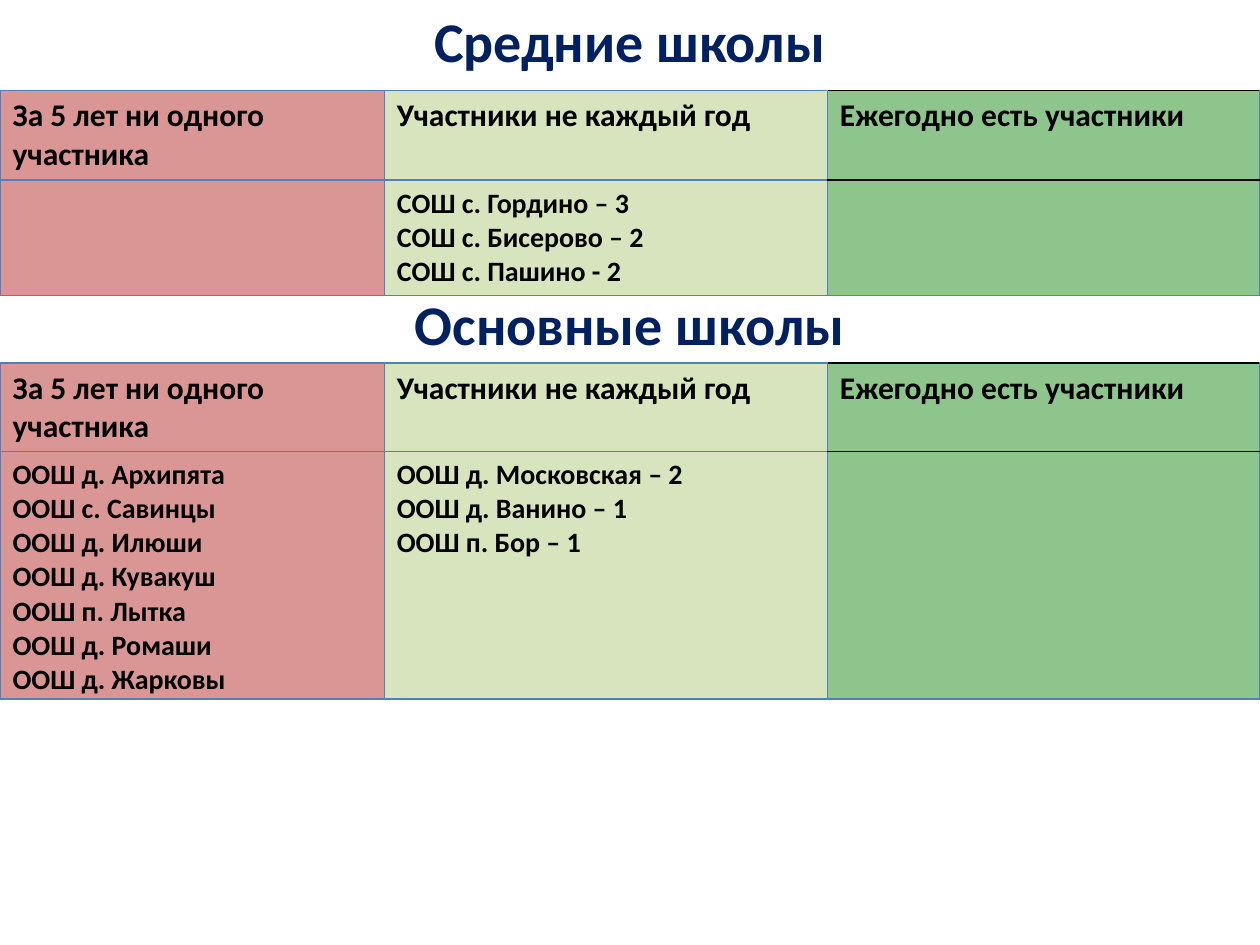
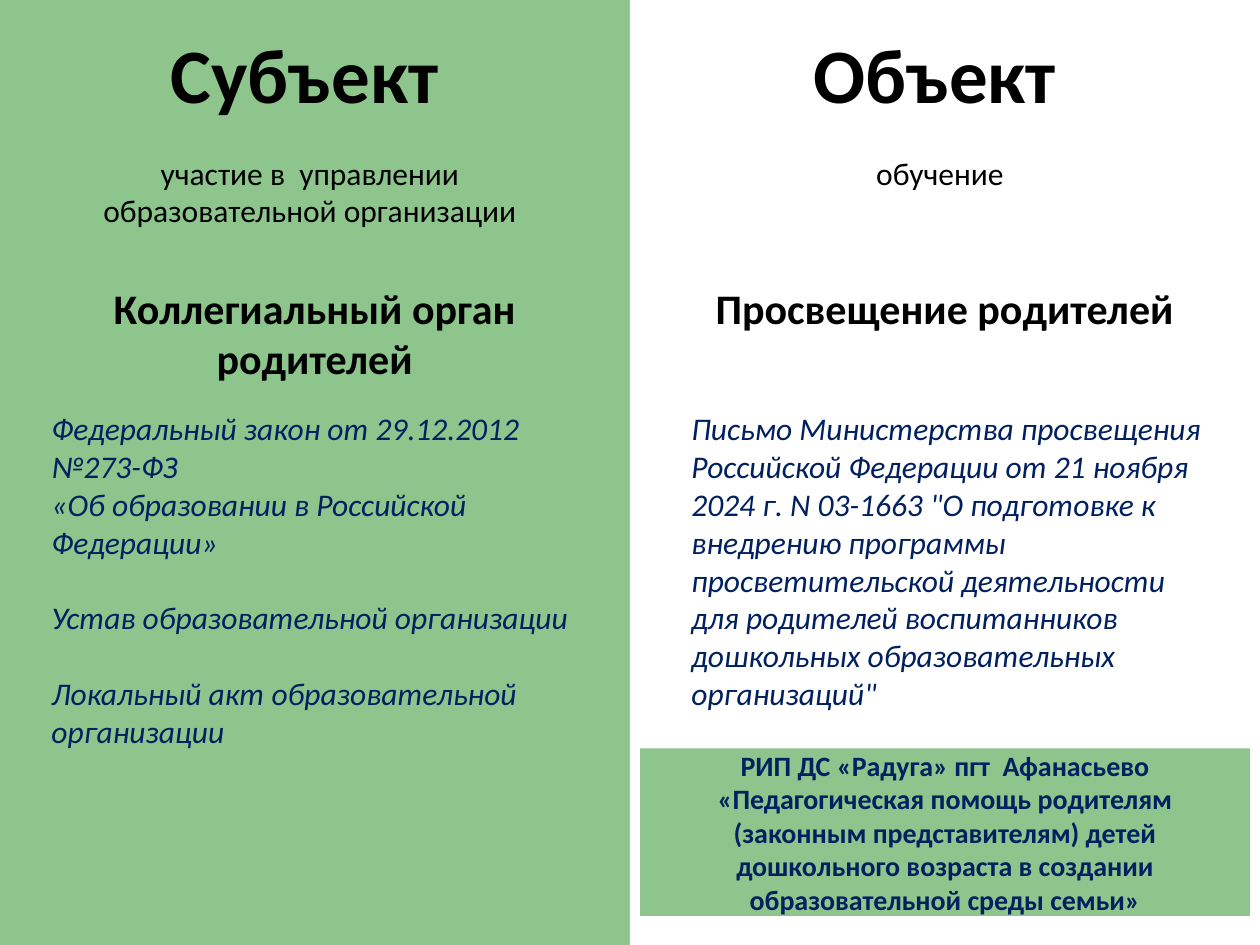
import dataclasses

import lxml.etree
import pptx
import pptx.dml.color
import pptx.enum.shapes
import pptx.enum.text
import pptx.oxml.ns
import pptx.util

Pt = pptx.util.Pt
Align = pptx.enum.text.PP_ALIGN
Anchor = pptx.enum.text.MSO_ANCHOR


@dataclasses.dataclass(frozen=True)
class Theme:
    font: str = "Calibri"
    black: str = "000000"
    white: str = "FFFFFF"
    navy: str = "002060"
    border: str = "4F81BD"
    red: str = "D99694"
    lime: str = "D7E4BD"
    green: str = "8DC58D"
    display: int = 44
    title: int = 32
    heading: int = 24
    body: int = 18
    small: int = 16


THEME = Theme()
WIDTH, HEIGHT = 720, 540
COLUMN_WIDTHS = (219.6, 253.2, 247.2)
COLUMN_FILLS = (THEME.red, THEME.lime, THEME.green)
COLUMN_HEADERS = (
    "За 5 лет ни одного участника",
    "Участники не каждый год",
    "Ежегодно есть участники",
)


def rgb(value):
    return pptx.dml.color.RGBColor.from_string(value)


def write_text(frame, lines, size=THEME.body, color=THEME.black, bold=False,
               italic=False, align=Align.LEFT, gaps=None):
    frame.word_wrap = True
    for index, line in enumerate(lines):
        paragraph = frame.paragraphs[0] if index == 0 else frame.add_paragraph()
        paragraph.alignment = align
        paragraph.space_before = Pt((gaps or {}).get(index, 0))
        run = paragraph.add_run()
        run.text = line
        run.font.name = THEME.font
        run.font.size = Pt(size)
        run.font.bold = bold
        run.font.italic = italic
        run.font.color.rgb = rgb(color)


def add_text(slide, box, lines, **text_format):
    shape = slide.shapes.add_textbox(*map(Pt, box))
    write_text(shape.text_frame, lines, **text_format)


def add_panel(slide, box, color):
    shape = slide.shapes.add_shape(
        pptx.enum.shapes.MSO_SHAPE.RECTANGLE, *map(Pt, box))
    shape.shadow.inherit = False
    shape.fill.solid()
    shape.fill.fore_color.rgb = rgb(color)
    shape.line.fill.background()
    return shape


def set_borders(cell, **overrides):
    properties = cell._tc.get_or_add_tcPr()
    qn = pptx.oxml.ns.qn
    for side in "LRTB":
        line = lxml.etree.SubElement(properties, qn(f"a:ln{side}"), w=str(Pt(1)))
        fill = lxml.etree.SubElement(line, qn("a:solidFill"))
        lxml.etree.SubElement(
            fill, qn("a:srgbClr"), val=overrides.get(side, THEME.border))


def add_school_table(slide, top, row_heights, schools):
    frame = slide.shapes.add_table(
        2, 3, Pt(0), Pt(top), Pt(WIDTH), Pt(sum(row_heights)))
    table = frame.table
    table.first_row = table.horz_banding = False
    for row, height in zip(table.rows, row_heights):
        row.height = Pt(height)
    for index, header in enumerate(COLUMN_HEADERS):
        table.columns[index].width = Pt(COLUMN_WIDTHS[index])
        header_cell, school_cell = table.cell(0, index), table.cell(1, index)
        last = index == len(COLUMN_HEADERS) - 1
        set_borders(header_cell, **({"T": THEME.black, "B": THEME.black} if last else {}))
        set_borders(school_cell, **({"T": THEME.black} if last else {}))
        for cell in (header_cell, school_cell):
            cell.fill.solid()
            cell.fill.fore_color.rgb = rgb(COLUMN_FILLS[index])
        write_text(header_cell.text_frame, [header], bold=True)
        write_text(school_cell.text_frame, schools[index], size=THEME.small, bold=True)


def add_school_section(slide, title_top, table_top, title, row_heights, schools):
    add_school_table(slide, table_top, row_heights, schools)
    add_text(slide, (0, title_top, WIDTH, 46), [title], size=THEME.title,
             color=THEME.navy, bold=True, align=Align.CENTER)


def add_role_column(slide, left, title, summary, heading, sources,
                    source_indent=22.3, gaps=None):
    add_text(slide, (left + 16.6, 11.5, 315, 60.5), [title],
             size=THEME.display, bold=True, align=Align.CENTER)
    add_text(slide, (left + 22.3, 84.2, 309.6, 51), [summary], align=Align.CENTER)
    add_text(slide, (left + 22.3, 157.7, 315, 65.5), [heading],
             size=THEME.heading, bold=True, align=Align.CENTER)
    add_text(slide, (left + source_indent, 230.4, 315, 204), sources,
             color=THEME.navy, italic=True, gaps=gaps)


def build_schools_slide(slide):
    add_school_section(slide, 0, 51.8, "Средние школы", (51, 65.5), (
        [],
        ["СОШ с. Гордино – 3", "СОШ с. Бисерово – 2", "СОШ с. Пашино - 2"],
        [],
    ))
    add_school_section(slide, 162, 207.4, "Основные школы", (50.5, 141.5), (
        ["ООШ д. Архипята", "ООШ с. Савинцы", "ООШ д. Илюши", "ООШ д. Кувакуш",
         "ООШ п. Лытка", "ООШ д. Ромаши", "ООШ д. Жарковы"],
        ["ООШ д. Московская – 2", "ООШ д. Ванино – 1", "ООШ п. Бор – 1"],
        [],
    ))


def build_roles_slide(slide):
    slide.background.fill.solid()
    slide.background.fill.fore_color.rgb = rgb(THEME.green)
    middle = WIDTH / 2
    add_panel(slide, (middle, 0, middle, HEIGHT), THEME.white)
    add_role_column(
        slide, 0, "Субъект", "участие в  управлении образовательной организации",
        "Коллегиальный орган родителей",
        ["Федеральный закон от 29.12.2012 №273-ФЗ",
         "«Об образовании в Российской Федерации»",
         "Устав образовательной организации",
         "Локальный акт образовательной организации"],
        gaps={2: 21.6, 3: 21.6})
    add_role_column(
        slide, middle, "Объект", "обучение", "Просвещение родителей",
        ["Письмо Министерства просвещения Российской Федерации от 21 ноября "
         "2024 г. N 03-1663 \"О подготовке к внедрению программы просветительской "
         "деятельности для родителей воспитанников дошкольных образовательных "
         "организаций\""],
        source_indent=28)
    project = add_panel(slide, (middle + 5.8, 427.6, 348.5, 95.8), THEME.green)
    project.text_frame.vertical_anchor = Anchor.MIDDLE
    write_text(
        project.text_frame,
        ["РИП ДС «Радуга» пгт  Афанасьево",
         "«Педагогическая помощь родителям (законным представителям) детей "
         "дошкольного возраста в создании образовательной среды семьи»"],
        size=THEME.small, color=THEME.navy, bold=True, align=Align.CENTER)


def main():
    presentation = pptx.Presentation()
    presentation.slide_width, presentation.slide_height = Pt(WIDTH), Pt(HEIGHT)
    for build_slide in (build_schools_slide, build_roles_slide):
        build_slide(presentation.slides.add_slide(presentation.slide_layouts[6]))
    presentation.save("out.pptx")


if __name__ == "__main__":
    main()
